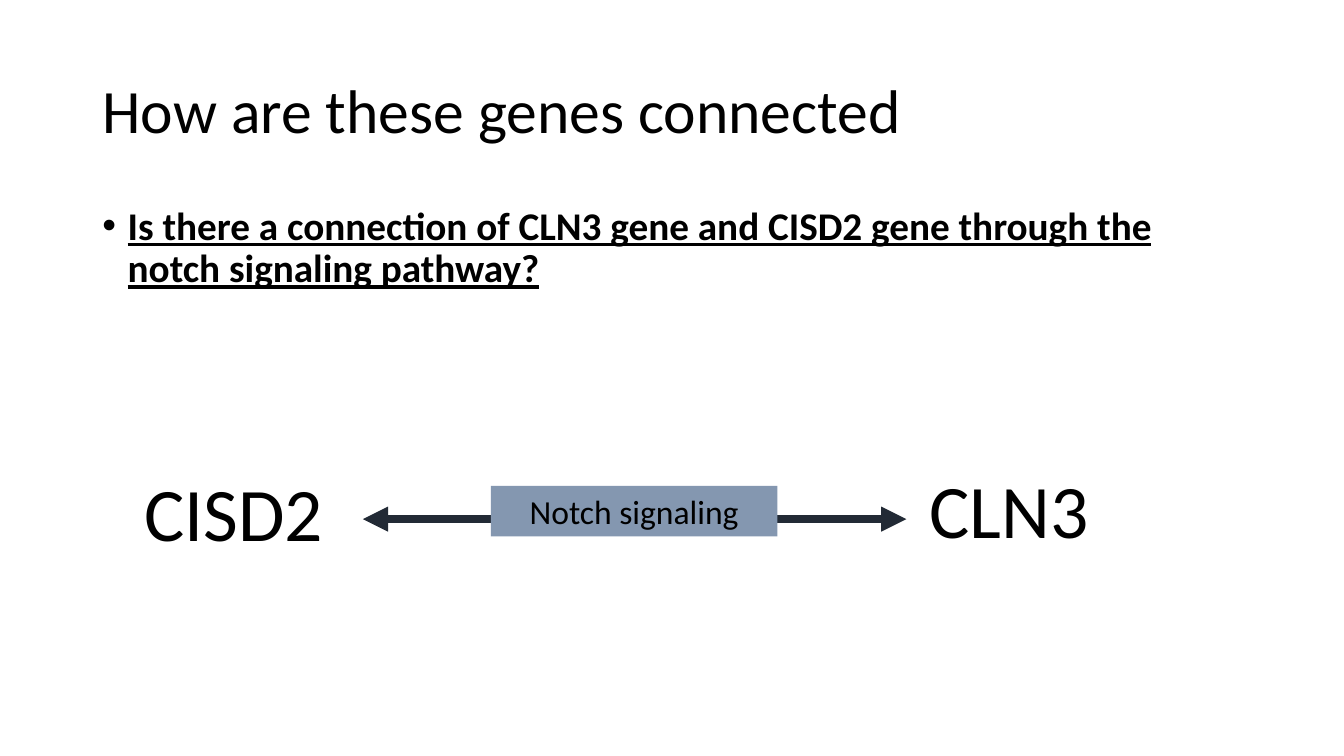
from dataclasses import dataclass

from lxml.etree import SubElement
from pptx import Presentation
from pptx.dml.color import RGBColor
from pptx.enum.shapes import MSO_CONNECTOR as Connector, MSO_SHAPE as Shape
from pptx.enum.text import MSO_ANCHOR as Anchor, MSO_AUTO_SIZE as AutoSize, PP_ALIGN as Align
from pptx.oxml.ns import qn
from pptx.util import Inches, Pt


@dataclass(frozen=True)
class Theme:
    font: str = "Calibri"
    ink: str = "000000"
    arrow: str = "222A35"
    box: str = "8497B0"
    title_size: int = 44
    body_size: int = 28
    gene_size: int = 54
    label_size: int = 24
    arrow_width: int = 6


def write_text(shape, text, size, theme, align=Align.CENTER, anchor=Anchor.TOP,
               wrap=True, fit=AutoSize.NONE, emphasis=False, line_spacing=1.0, before=0):
    frame = shape.text_frame
    frame.word_wrap = wrap
    frame.auto_size = fit
    frame.vertical_anchor = anchor
    paragraph = frame.paragraphs[0]
    paragraph.alignment = align
    paragraph.line_spacing = line_spacing
    paragraph.space_before = Pt(before)
    run = paragraph.add_run()
    run.text = text
    font = run.font
    font.name, font.size = theme.font, Pt(size)
    font.color.rgb = RGBColor.from_string(theme.ink)
    font.bold = font.underline = emphasis
    return paragraph


class GridSlide:
    """Draw styled elements on a slide with a grid of 160 columns and 90 rows."""

    columns, rows = 160, 90

    def __init__(self, presentation, theme):
        self.theme = theme
        self.column = presentation.slide_width / self.columns
        self.row = presentation.slide_height / self.rows
        self.slide = presentation.slides.add_slide(presentation.slide_layouts[1])
        self.shapes = self.slide.shapes

    def point(self, column, row):
        return round(column * self.column), round(row * self.row)

    def area(self, column, row, width, height):
        return *self.point(column, row), *self.point(width, height)

    def place(self, shape, cells):
        shape.left, shape.top, shape.width, shape.height = self.area(*cells)
        return shape

    def title(self, text, cells):
        shape = self.place(self.shapes.title, cells)
        write_text(shape, text, self.theme.title_size, self.theme, align=Align.LEFT,
                   anchor=Anchor.MIDDLE, line_spacing=0.9)

    def bullet(self, text, cells):
        shape = self.place(self.slide.placeholders[1], cells)
        paragraph = write_text(shape, text, self.theme.body_size, self.theme, align=Align.LEFT,
                               emphasis=True, line_spacing=0.9, before=10)
        properties = paragraph._p.get_or_add_pPr()
        properties.set("marL", str(Inches(0.25)))
        properties.set("indent", str(-Inches(0.25)))
        SubElement(properties, qn("a:buFont")).set("typeface", "Arial")
        SubElement(properties, qn("a:buChar")).set("char", "•")

    def gene(self, text, cells):
        shape = self.shapes.add_textbox(*self.area(*cells))
        write_text(shape, text, self.theme.gene_size, self.theme, wrap=False,
                   fit=AutoSize.SHAPE_TO_FIT_TEXT)

    def double_arrow(self, start, end, row):
        connector = self.shapes.add_connector(
            Connector.STRAIGHT, *self.point(start, row), *self.point(end, row))
        connector.line.color.rgb = RGBColor.from_string(self.theme.arrow)
        connector.line.width = Pt(self.theme.arrow_width)
        line = connector.line._get_or_add_ln()
        for tip in ("a:headEnd", "a:tailEnd"):
            SubElement(line, qn(tip)).set("type", "triangle")
        SubElement(connector._element.spPr, qn("a:effectLst"))

    def label_box(self, text, cells):
        shape = self.shapes.add_shape(Shape.RECTANGLE, *self.area(*cells))
        shape.shadow.inherit = False
        shape.fill.solid()
        shape.fill.fore_color.rgb = RGBColor.from_string(self.theme.box)
        shape.line.fill.background()
        write_text(shape, text, self.theme.label_size, self.theme,
                   fit=AutoSize.SHAPE_TO_FIT_TEXT)


def main():
    presentation = Presentation()
    presentation.slide_width, presentation.slide_height = Inches(13.33), Inches(7.5)
    page = GridSlide(presentation, Theme())
    page.title("How are these genes connected", (11, 4.8, 138, 17.4))
    page.bullet("Is there a connection of CLN3 gene and CISD2 gene through the "
                "notch signaling pathway?", (11, 24, 138, 57.1))
    page.gene("CISD2", (15.85, 54.85, 23.9, 12.1))
    page.gene("CLN3", (109.35, 54.5, 21.6, 12.1))
    page.double_arrow(43.2, 107.9, 61.8)
    page.label_box("Notch signaling", (58.45, 57.85, 34.1, 6))
    presentation.save("out.pptx")


if __name__ == "__main__":
    main()
